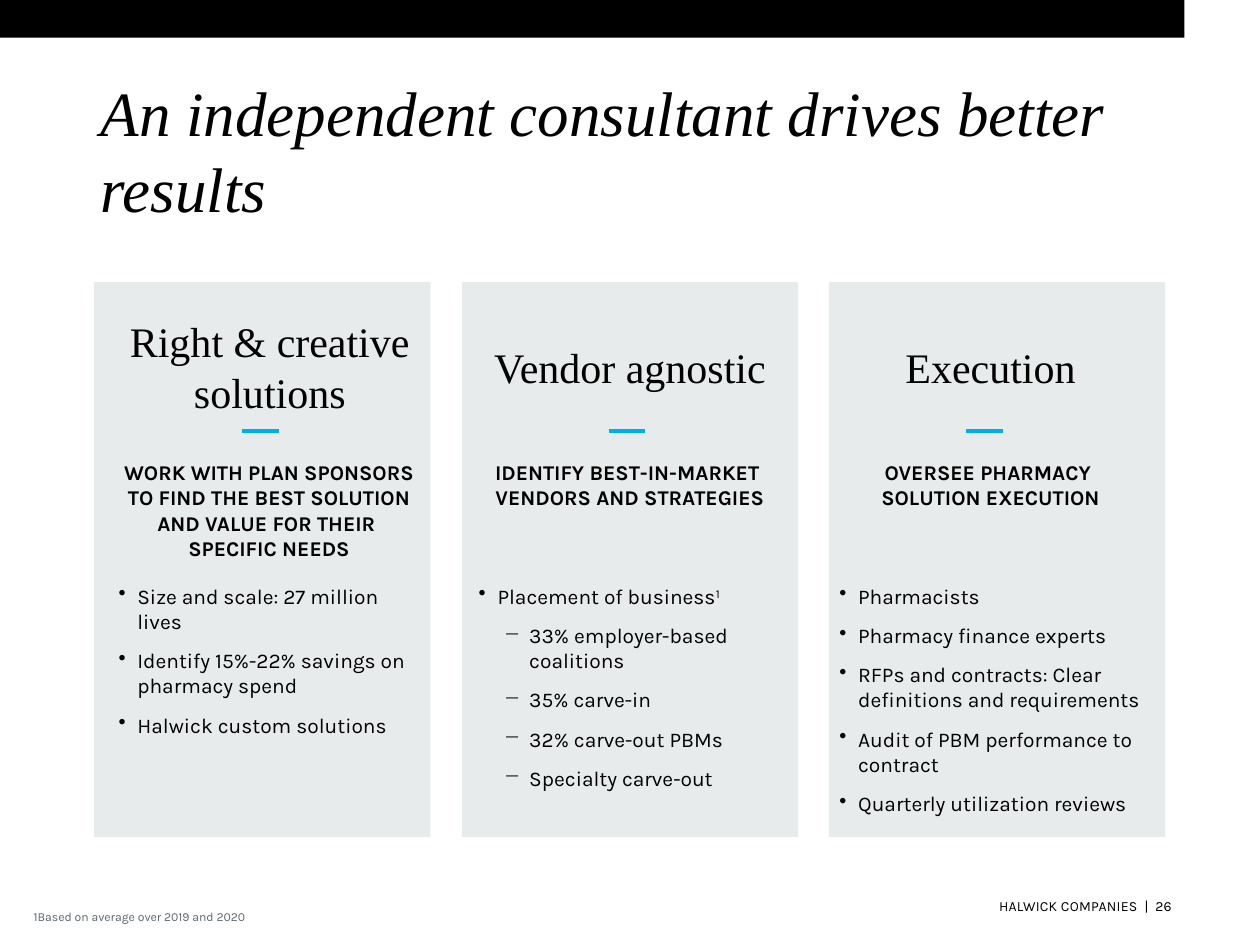
import pptx
import pptx.dml.color
import pptx.enum.shapes
import pptx.enum.text
import pptx.oxml.ns
import pptx.util
from lxml import etree

Cm, Pt = pptx.util.Cm, pptx.util.Pt
ALIGN = pptx.enum.text.PP_ALIGN
ANCHOR = pptx.enum.text.MSO_ANCHOR
RECTANGLE = pptx.enum.shapes.MSO_SHAPE.RECTANGLE
qn = pptx.oxml.ns.qn

COLORS = {"black": "000000", "panel": "E8EBEC", "accent": "00AEEF", "note": "5B6770"}
COLORS = {name: pptx.dml.color.RGBColor.from_string(value) for name, value in COLORS.items()}
SERIF, SANS = "Times New Roman", "Karla"
# Per level: bullet character, text indent, hanging indent
BULLETS = [("•", Cm(0.38), Cm(-0.38)), ("−", Cm(1.02), Cm(-0.51))]

columns = [
    {
        "panel": 1.9, "text": 2.39, "accent": 4.88,
        "statement_box": (2.21, 6.43),
        "heading": "Right & creative solutions",
        "statement": "WORK WITH PLAN SPONSORS TO FIND THE BEST SOLUTION "
                     "AND VALUE FOR THEIR \vSPECIFIC NEEDS",
        "points": [(0, "Size and scale: 27 million lives"),
                   (0, "Identify 15%-22% savings on pharmacy spend"),
                   (0, "Halwick custom solutions")],
    },
    {
        "panel": 9.31, "text": 9.65, "accent": 12.27,
        "statement_box": (9.65, 6.1),
        "heading": "Vendor agnostic",
        "statement": "IDENTIFY BEST-IN-MARKET \vVENDORS AND STRATEGIES",
        "points": [(0, "Placement of business^1"),
                   (1, "33% employer-based coalitions"),
                   (1, "35% carve-in"),
                   (1, "32% carve-out PBMs"),
                   (1, "Specialty carve-out")],
    },
    {
        "panel": 16.71, "text": 16.92, "accent": 19.48,
        "statement_box": (16.92, 6.1),
        "heading": "Execution",
        "statement": "OVERSEE PHARMACY \vSOLUTION EXECUTION",
        "points": [(0, "Pharmacists"),
                   (0, "Pharmacy finance experts"),
                   (0, "RFPs and contracts: Clear definitions and requirements"),
                   (0, "Audit of PBM performance to contract"),
                   (0, "Quarterly utilization reviews")],
    },
]

presentation = pptx.Presentation()
presentation.slide_width, presentation.slide_height = Cm(25.4), Cm(19.05)
slide = presentation.slides.add_slide(presentation.slide_layouts[6])


def add_block(left, top, width, height, color):
    block = slide.shapes.add_shape(RECTANGLE, Cm(left), Cm(top), Cm(width), Cm(height))
    block.shadow.inherit = False
    block.fill.solid()
    block.fill.fore_color.rgb = COLORS[color]
    block.line.fill.background()


def add_text(box, texts, font, size, color="black", align=ALIGN.LEFT,
             anchor=ANCHOR.TOP, margins=(0, 0.13), spaced=True):
    """Add a text box with one paragraph per text; "^" starts a superscript."""
    frame = slide.shapes.add_textbox(*[Cm(length) for length in box]).text_frame
    frame.word_wrap = True
    frame.vertical_anchor = anchor
    frame.margin_left = frame.margin_right = Cm(margins[0])
    frame.margin_top = frame.margin_bottom = Cm(margins[1])
    for index, text in enumerate(texts):
        paragraph = frame.add_paragraph() if index else frame.paragraphs[0]
        base, _, superscript = text.partition("^")
        paragraph.text = base
        if superscript:
            raised = paragraph.add_run()
            raised.text = superscript
            raised.font._element.set("baseline", "30000")
        paragraph.alignment = align
        paragraph.font.name = font
        paragraph.font.size = Pt(size)
        paragraph.font.color.rgb = COLORS[color]
        if spaced:
            paragraph.space_before, paragraph.space_after = Pt(5), Pt(3)
    return frame.paragraphs


add_block(0, 0, 23.88, 0.76, "black")
for column in columns:
    add_block(column["panel"], 5.69, 6.78, 11.18, "panel")

title = add_text((2.03, 1.52, 21.34, 3.02), ["An independent consultant drives better results"],
                 SERIF, 36, anchor=ANCHOR.BOTTOM, margins=(0, 0), spaced=False)
title[0].font.italic = True

for column in columns:
    left = column["text"]
    add_text((left, 6.38, 6.1, 2.01), [column["heading"]], SERIF, 24,
             align=ALIGN.CENTER, anchor=ANCHOR.MIDDLE)

    statement_left, statement_width = column["statement_box"]
    statement = add_text((statement_left, 9.27, statement_width, 1.6), [column["statement"]],
                         SANS, 12, align=ALIGN.CENTER, margins=(0, 0))
    statement[0].font.bold = True

    levels, points = zip(*column["points"])
    for level, point in zip(levels, add_text((left, 11.63, 6.1, 5.44), points, SANS, 12)):
        character, indent, hanging = BULLETS[level]
        point.level = level
        properties = point._p.get_or_add_pPr()
        properties.set("marL", str(indent))
        properties.set("indent", str(hanging))
        bullet = etree.Element(qn("a:buChar"), char=character)
        properties.find(qn("a:defRPr")).addprevious(bullet)

    accent = slide.shapes.add_connector(
        pptx.enum.shapes.MSO_CONNECTOR.STRAIGHT,
        Cm(column["accent"]), Cm(8.69), Cm(column["accent"] + 0.74), Cm(8.69))
    accent.line.color.rgb = COLORS["accent"]
    accent.line.width = Pt(2.5)
    etree.SubElement(accent._element.spPr, qn("a:effectLst"))

add_text((0.43, 18.21, 6.91, 0.56), ["1Based on average over 2019 and 2020"],
         SANS, 7, color="note", margins=(0.25, 0.13), spaced=False)
company = add_text((18.49, 17.96, 4.67, 0.61), ["HALWICK COMPANIES  |"], SANS, 8,
                   align=ALIGN.RIGHT, anchor=ANCHOR.MIDDLE)
company[0].runs[0].font._element.set("spc", "10")
add_text((23.06, 17.96, 0.56, 0.61), ["26"], SANS, 8,
         align=ALIGN.RIGHT, anchor=ANCHOR.MIDDLE, spaced=False)

presentation.save("out.pptx")
